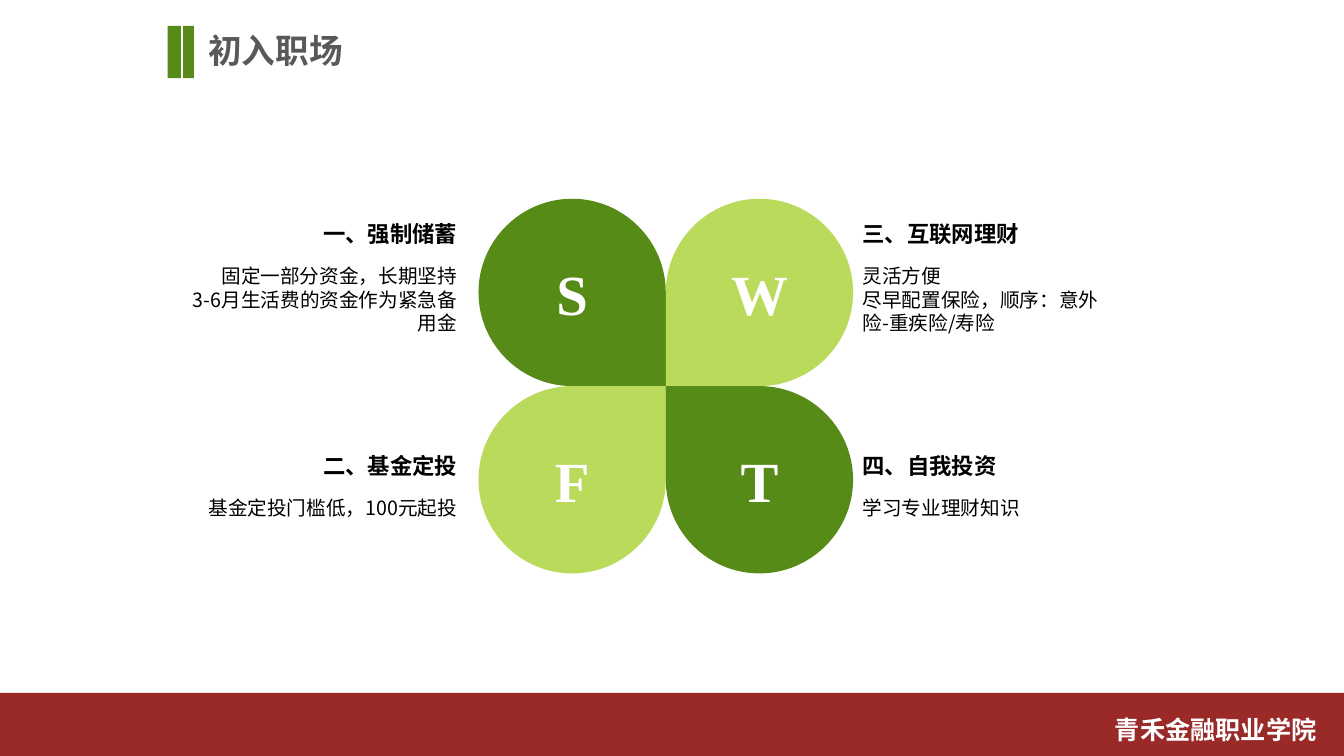
from lxml.etree import SubElement
from pptx import Presentation
from pptx.dml.color import RGBColor
from pptx.enum.shapes import MSO_SHAPE
from pptx.enum.text import MSO_ANCHOR, MSO_AUTO_SIZE, PP_ALIGN
from pptx.oxml.ns import qn
from pptx.util import Pt

# Content
TITLE = "初入职场"
SCHOOL = "青禾金融职业学院"
GREEN, LIME, RED = "578B18", "BADA5C", "992A28"
WHITE, BLACK, GREY = "FFFFFF", "000000", "595959"
# letter, colour, horizontal and vertical side of the hub, heading, body lines
PETALS = [
    ("S", GREEN, -1, -1, "一、强制储蓄",
     ["固定一部分资金，长期坚持", "3-6月生活费的资金作为紧急备用金"]),
    ("W", LIME, 1, -1, "三、互联网理财",
     ["灵活方便", "尽早配置保险，顺序：意外险-重疾险/寿险"]),
    ("F", LIME, -1, 1, "二、基金定投", ["基金定投门槛低，100元起投"]),
    ("T", GREEN, 1, 1, "四、自我投资", ["学习专业理财知识"]),
]

# Layout, in points
SLIDE_WIDTH, SLIDE_HEIGHT = 960, 540
HUB_X, HUB_Y, RADIUS = 475.6, 275.8, 66.9
LEFT_TEXT_EDGE, RIGHT_TEXT_EDGE = 333.8, 609.1
HEADING_TOP = {-1: 153.8, 1: 319.5}
BODY_OFFSET = 31.2
BODY_WIDTH = {"S": 204.5, "W": 193.7, "F": 197.3, "T": 197.3}
HEADING_WIDTH = {"S": 154, "W": 168.5, "F": 170, "T": 206}
CJK_FONT, LETTER_FONT = "Noto Sans CJK SC", "Times New Roman"
LINE_RATIO = 1.2

# Petal outline in radii from the hub; the last three sides are quarter circles
PETAL_POINTS = [(1, 0), (2, 1), (1, 2), (0, 1)]
ARC_CORNERS = [(2, 0), (2, 2), (0, 2)]
ARC_PULL = 0.55


def color(value):
    return RGBColor.from_string(value)


def paint(shape, fill):
    shape.shadow.inherit = False
    shape.fill.solid()
    shape.fill.fore_color.rgb = color(fill)
    shape.line.fill.background()


def format_paragraph(paragraph, font_name, size, text_color, bold, alignment):
    paragraph.alignment = alignment
    font = paragraph.font
    font.size, font.bold, font.name = Pt(size), bold, font_name
    font.color.rgb = color(text_color)
    defaults = paragraph._p.pPr.find(qn("a:defRPr"))
    SubElement(defaults, qn("a:ea")).set("typeface", font_name)


def write(shape, lines, size, text_color, bold=False, alignment=PP_ALIGN.LEFT):
    frame = shape.text_frame
    frame.word_wrap = True
    frame.auto_size = MSO_AUTO_SIZE.NONE
    frame.vertical_anchor = MSO_ANCHOR.TOP
    frame.text = "\n".join(lines)
    for paragraph in frame.paragraphs:
        format_paragraph(paragraph, CJK_FONT, size, text_color, bold, alignment)
        paragraph.line_spacing = Pt(round(size * LINE_RATIO, 1))
        paragraph.space_before = Pt(0)


def add_bar(slide, left, top, width, height, fill):
    bar = slide.shapes.add_shape(MSO_SHAPE.RECTANGLE, Pt(left), Pt(top), Pt(width), Pt(height))
    paint(bar, fill)


def add_text(slide, left, top, width, height, *text):
    box = slide.shapes.add_textbox(Pt(left), Pt(top), Pt(width), Pt(height))
    write(box, *text)


def round_petal(petal, side_x, side_y):
    # Turn the three outer sides into quarter circles
    def local(value, side):
        return str(Pt(RADIUS * (value if side > 0 else 2 - value)))

    sides = list(petal._element.iter(qn("a:lnTo")))[1:4]
    for side, start, end, corner in zip(sides, PETAL_POINTS, PETAL_POINTS[1:], ARC_CORNERS):
        side.tag = qn("a:cubicBezTo")
        for index, anchor in enumerate((start, end)):
            x, y = (a + ARC_PULL * (c - a) for a, c in zip(anchor, corner))
            control = SubElement(side, qn("a:pt"))
            control.set("x", local(x, side_x))
            control.set("y", local(y, side_y))
            side.insert(index, control)


def add_petal(slide, letter, fill, side_x, side_y):
    points = [(Pt(HUB_X + side_x * RADIUS * x), Pt(HUB_Y + side_y * RADIUS * y))
              for x, y in PETAL_POINTS]
    builder = slide.shapes.build_freeform(Pt(HUB_X), Pt(HUB_Y))
    builder.add_line_segments(points, close=True)
    petal = builder.convert_to_shape()
    round_petal(petal, side_x, side_y)
    paint(petal, fill)
    petal.text_frame.text = letter
    petal.text_frame.vertical_anchor = MSO_ANCHOR.MIDDLE
    format_paragraph(petal.text_frame.paragraphs[0], LETTER_FONT, 40.5, WHITE, True, PP_ALIGN.CENTER)


def add_notes_beside(slide, letter, side_x, side_y, heading, body):
    alignment = PP_ALIGN.RIGHT if side_x < 0 else PP_ALIGN.LEFT
    top = HEADING_TOP[side_y]
    body_height = 58.3 if side_y < 0 else 24.5
    parts = [
        (top + BODY_OFFSET, BODY_WIDTH[letter], body_height, body, 14, False),
        (top, HEADING_WIDTH[letter], 26.6, [heading], 16, True),
    ]
    for part_top, width, height, lines, size, bold in parts:
        left = LEFT_TEXT_EDGE - width if side_x < 0 else RIGHT_TEXT_EDGE
        add_text(slide, left, part_top, width, height, lines, size, BLACK, bold, alignment)


def main():
    presentation = Presentation()
    presentation.slide_width, presentation.slide_height = Pt(SLIDE_WIDTH), Pt(SLIDE_HEIGHT)
    slide = presentation.slides.add_slide(presentation.slide_layouts[5])

    # Footer band
    add_bar(slide, 0, 495, SLIDE_WIDTH, 45, RED)
    add_text(slide, 607, 506.7, 340.5, 51, [SCHOOL], 18, WHITE, True, PP_ALIGN.RIGHT)

    # Title with its two bars
    title = slide.shapes.title
    title.left, title.top, title.width, title.height = Pt(141.6), Pt(17.8), Pt(237.6), Pt(36)
    write(title, [TITLE], 24, GREY, True)
    for left, width in [(119.7, 9.5), (130.8, 7.8)]:
        add_bar(slide, left, 18.5, width, 37.3, GREEN)

    # Clover and its texts
    for letter, fill, side_x, side_y, heading, body in PETALS:
        add_petal(slide, letter, fill, side_x, side_y)
        add_notes_beside(slide, letter, side_x, side_y, heading, body)

    presentation.save("out.pptx")


if __name__ == "__main__":
    main()
